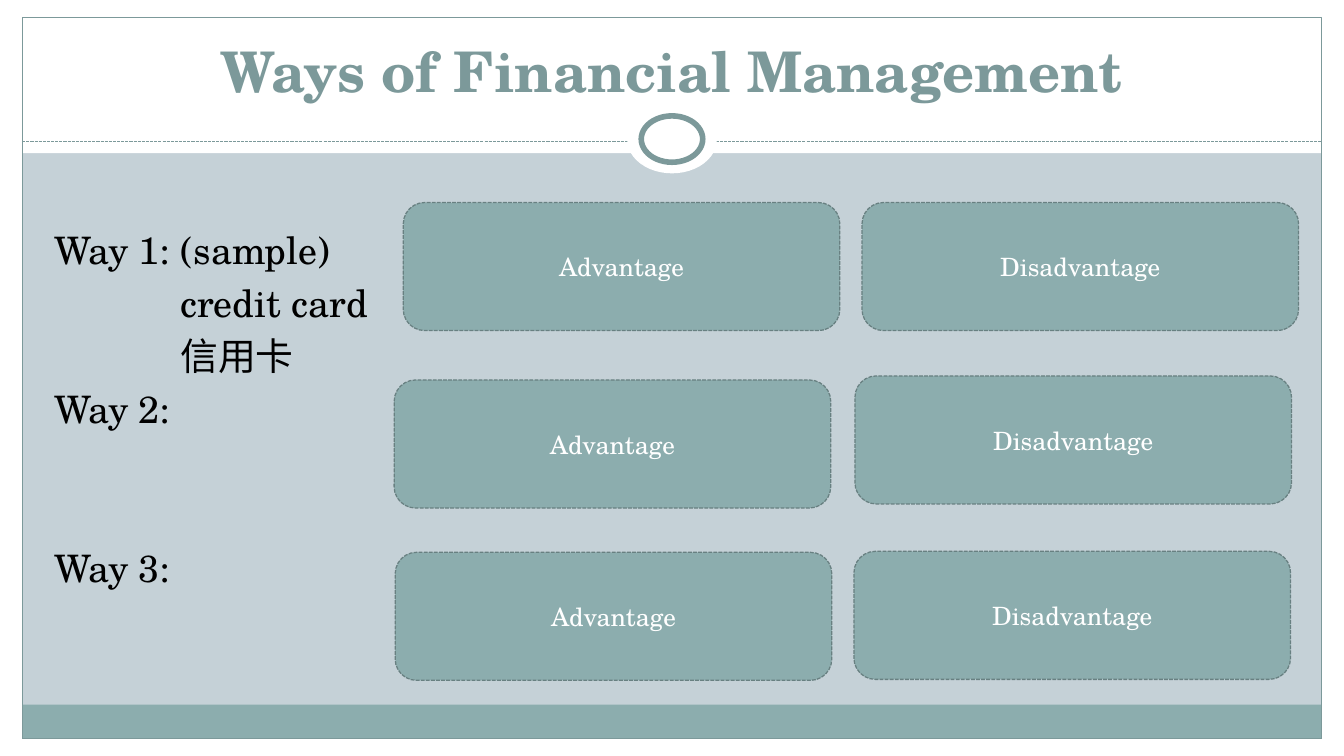
from lxml.etree import SubElement
from pptx import Presentation
from pptx.dml.color import RGBColor
from pptx.enum.dml import MSO_LINE
from pptx.enum.shapes import MSO_CONNECTOR, MSO_SHAPE
from pptx.enum.text import MSO_ANCHOR, PP_ALIGN
from pptx.oxml.ns import qn
from pptx.util import Inches, Pt

WHITE = RGBColor(0xFF, 0xFF, 0xFF)
BLACK = RGBColor(0, 0, 0)
MIST = RGBColor(0xC5, 0xD1, 0xD7)
TEAL = RGBColor(0x8C, 0xAD, 0xAE)
SLATE = RGBColor(0x7C, 0x99, 0x9A)
EDGE = RGBColor(0x68, 0x80, 0x81)
FONT = "TeX Gyre Schola"

WIDTH, HEIGHT = 13.33, 7.5
MARGIN = 0.22
INNER = WIDTH - 2 * MARGIN
CARD_WIDTH, CARD_HEIGHT = 4.33, 1.27


class SlideBuilder:
    def __init__(self, slide, font):
        self.slide = slide
        self.font = font

    def style(self, paragraph, size, color, bold=False):
        font = paragraph.font
        font.name, font.size, font.bold = self.font, Pt(size), bold
        font.color.rgb = color

    def shape(self, kind, area, fill=None, line=None, weight=0.75, parent=None):
        shapes = (parent or self.slide).shapes
        shape = shapes.add_shape(kind, *map(Inches, area))
        shape.shadow.inherit = False
        if fill is None:
            shape.fill.background()
        else:
            shape.fill.solid()
            shape.fill.fore_color.rgb = fill
        if line is None:
            shape.line.fill.background()
        else:
            shape.line.color.rgb = line
            shape.line.width = Pt(weight)
        return shape

    def dashed_rule(self, left, right, top):
        rule = self.slide.shapes.add_connector(
            MSO_CONNECTOR.STRAIGHT, *map(Inches, (left, top, right, top)))
        rule.line.color.rgb = SLATE
        rule.line.width = Pt(0.75)
        rule.line.dash_style = MSO_LINE.SQUARE_DOT
        SubElement(rule._element.spPr, qn("a:effectLst"))

    def title(self, text, area):
        title = self.slide.shapes.title
        title.left, title.top, title.width, title.height = map(Inches, area)
        title.text_frame.text = text
        title.text_frame.vertical_anchor = MSO_ANCHOR.BOTTOM
        para = title.text_frame.paragraphs[0]
        para.alignment = PP_ALIGN.CENTER
        self.style(para, 40, SLATE, bold=True)
        # Bring the title in front of the white header
        self.slide.shapes._spTree.append(title._element)

    def text_list(self, area, lines):
        box = self.slide.shapes.add_textbox(*map(Inches, area))
        frame = box.text_frame
        frame.word_wrap = True
        for index, (text, indent, space) in enumerate(lines):
            para = frame.paragraphs[0] if index == 0 else frame.add_paragraph()
            para.text = text
            para.space_before = Pt(space)
            para._p.get_or_add_pPr().set("marL", str(Inches(indent)))
            self.style(para, 27, BLACK)

    def card(self, group, text, left, top):
        card = self.shape(MSO_SHAPE.ROUNDED_RECTANGLE,
                          (left, top, CARD_WIDTH, CARD_HEIGHT),
                          TEAL, EDGE, 0.9, group)
        card.line.dash_style = MSO_LINE.SQUARE_DOT
        card.text_frame.vertical_anchor = MSO_ANCHOR.MIDDLE
        para = card.text_frame.paragraphs[0]
        para.text = text
        para.alignment = PP_ALIGN.CENTER
        self.style(para, 18, WHITE)


def main():
    deck = Presentation()
    deck.slide_width, deck.slide_height = Inches(WIDTH), Inches(HEIGHT)
    page = deck.slides.add_slide(deck.slide_layouts[5])
    page.background.fill.solid()
    page.background.fill.fore_color.rgb = MIST
    builder = SlideBuilder(page, FONT)

    # White margins and header, footer band, frame
    for area in ((0, 7.33, WIDTH, 0.17), (0, 0, WIDTH, 1.52),
                 (0, 0, MARGIN, HEIGHT), (WIDTH - MARGIN, 0, MARGIN, HEIGHT)):
        builder.shape(MSO_SHAPE.RECTANGLE, area, WHITE)
    builder.shape(MSO_SHAPE.RECTANGLE, (MARGIN, 6.99, INNER, 0.34), TEAL)
    builder.shape(MSO_SHAPE.RECTANGLE, (MARGIN, 0.17, INNER, 7.16), line=SLATE)

    # Header rule with its ring
    builder.dashed_rule(MARGIN, WIDTH - MARGIN, 1.4)
    builder.shape(MSO_SHAPE.OVAL, (6.22, 1.05, 0.89, 0.67), WHITE)
    builder.shape(MSO_SHAPE.OVAL, (6.36, 1.15, 0.61, 0.46), WHITE, SLATE, 4)

    builder.title("Ways of Financial Management", (0.44, 0.25, 12.44, 0.83))

    # Ways: text, indent in inches, space before in points
    builder.text_list((0.44, 2.2, 3.45, 4.47), (
        ("Way 1: (sample)", 0, 5.4),
        ("credit card", 1.25, 5.4),
        ("信用卡", 1.25, 5.4),
        ("Way 2:", 0, 5.4),
        ("Way 3:", 0, 81),
    ))

    # One pair of cards for each way: left and top of both
    for advantage, disadvantage in (((4, 2.01), (8.55, 2.01)),
                                    ((3.91, 3.77), (8.48, 3.73)),
                                    ((3.92, 5.48), (8.47, 5.47))):
        pair = page.shapes.add_group_shape()
        builder.card(pair, "Advantage", *advantage)
        builder.card(pair, "Disadvantage", *disadvantage)

    deck.save("out.pptx")


if __name__ == "__main__":
    main()
